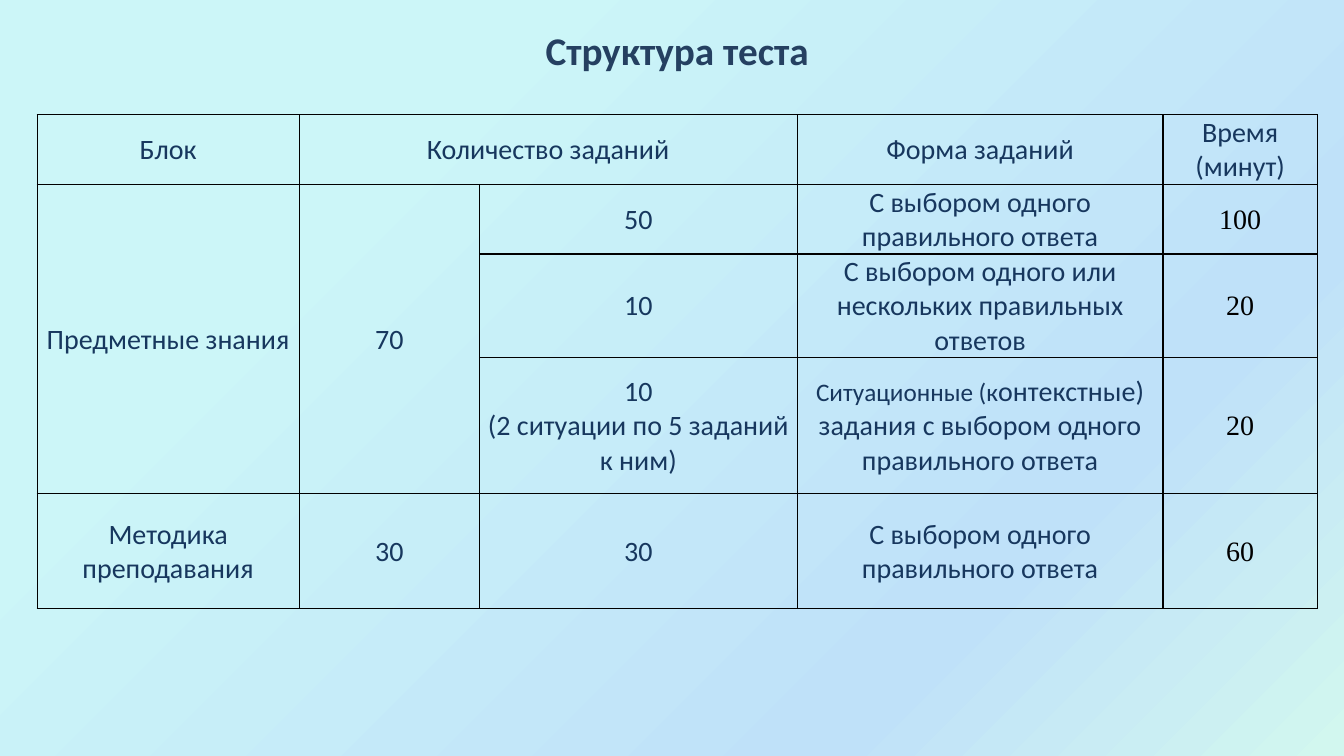
"""Build the slide on the structure of the test."""
from dataclasses import dataclass

from lxml.etree import SubElement
from pptx import Presentation
from pptx.dml.color import RGBColor as Rgb
from pptx.enum.text import MSO_ANCHOR as Anchor, PP_ALIGN as Align
from pptx.oxml.ns import qn
from pptx.util import Pt

TITLE = "Структура теста"
ONE = "С выбором одного правильного ответа"
ROWS = [
    ["Блок", "Количество заданий", "", "Форма заданий", "Время (минут)"],
    ["Предметные знания", "70", "50", ONE, "100"],
    ["", "", "10", "С выбором одного или нескольких правильных ответов", "20"],
    ["", "", "10\n(2 ситуации по 5 заданий к ним)",
     ("Ситуационные (к",
      "онтекстные) задания с выбором одного правильного ответа"), "20"],
    ["Методика преподавания", "30", "30", ONE, "60"],
]
SPANS = [((0, 1), (0, 2)), ((1, 0), (3, 0)), ((1, 1), (3, 1))]
WIDTHS = [187.2, 128.9, 226.8, 261.4, 110.2]
HEIGHTS = [49, 49, 73.5, 97.2, 82]
LEFT, TOP = 26.5, 82
HEAD = (15, 41)


@dataclass(frozen=True)
class Theme:
    """Colours, fonts and type sizes."""
    font: str = "Calibri"
    digit: str = "Times New Roman"
    title: str = "254061"
    text: str = "17375E"
    dark: str = "000000"
    back: tuple = ((25, "CCF6F8"), (75, "BFE1F9"), (100, "D2F7EF"))
    big: int = 28
    mid: int = 20
    small: int = 18
    line: int = 1


def style(font, name, size, color, bold=False):
    """Set the face, size and colour of a font."""
    font.name, font.size, font.bold = name, Pt(size), bold
    font.color.rgb = Rgb.from_string(color)


def add_color(node, color):
    """Add a colour to an XML node."""
    SubElement(node, qn("a:srgbClr"), val=color)


def paint(slide, theme):
    """Fill the background with the diagonal gradient."""
    fill = slide.background.fill
    fill.gradient()
    fill.gradient_angle = 315
    stops = next(slide.element.iter(qn("a:gsLst")))
    for old in list(stops):
        stops.remove(old)
    for place, color in theme.back:
        add_color(SubElement(stops, qn("a:gs"), pos=str(place * 1000)), color)


def frame(cell, theme):
    """Draw the four borders of a cell and clear its fill."""
    props = cell._tc.get_or_add_tcPr()
    for side in "LRTB":
        line = SubElement(props, qn(f"a:ln{side}"), w=str(Pt(theme.line)))
        add_color(SubElement(line, qn("a:solidFill")), theme.dark)
    cell.fill.background()


def write(cell, text, last, theme):
    """Put centred text in a cell, its last column in digits."""
    cell.vertical_anchor = Anchor.MIDDLE
    cell.margin_left = cell.margin_right = cell.margin_top = Pt(0.7)
    cell.margin_bottom = Pt(0)
    parts = (text,) if isinstance(text, str) else text
    para = cell.text_frame.paragraphs[0]
    para.text = parts[0]
    para.alignment = Align.CENTER
    for part in parts[1:]:
        para.add_run().text = part
    name, color = (theme.digit, theme.dark) if last else (theme.font, theme.text)
    for run in para.runs:
        style(run.font, name, theme.mid, color)
    if len(parts) > 1:
        para.runs[0].font.size = Pt(theme.small)


def add_grid(slide, theme):
    """Add the table of blocks, tasks and times."""
    table = slide.shapes.add_table(
        len(ROWS), len(WIDTHS), Pt(LEFT), Pt(TOP),
        Pt(sum(WIDTHS)), Pt(sum(HEIGHTS))).table
    table.first_row = table.horz_banding = False
    for col, width in zip(table.columns, WIDTHS):
        col.width = Pt(width)
    for row, height in zip(table.rows, HEIGHTS):
        row.height = Pt(height)
    for i, row in enumerate(ROWS):
        for j, text in enumerate(row):
            cell = table.cell(i, j)
            frame(cell, theme)
            write(cell, text, i > 0 and j == len(row) - 1, theme)
    for start, end in SPANS:
        table.cell(*start).merge(table.cell(*end))


def main():
    """Make the deck and save it."""
    theme = Theme()
    deck = Presentation()
    deck.slide_width, deck.slide_height = Pt(960), Pt(540)
    slide = deck.slides.add_slide(deck.slide_layouts[5])
    paint(slide, theme)
    title = slide.shapes.title
    top, height = HEAD
    title.left, title.top = Pt(LEFT), Pt(top)
    title.width, title.height = Pt(sum(WIDTHS)), Pt(height)
    title.text_frame.text = TITLE
    title.text_frame.vertical_anchor = Anchor.MIDDLE
    para = title.text_frame.paragraphs[0]
    para.alignment = Align.CENTER
    style(para.runs[0].font, theme.font, theme.big, theme.title, True)
    add_grid(slide, theme)
    deck.save("out.pptx")


if __name__ == "__main__":
    main()
